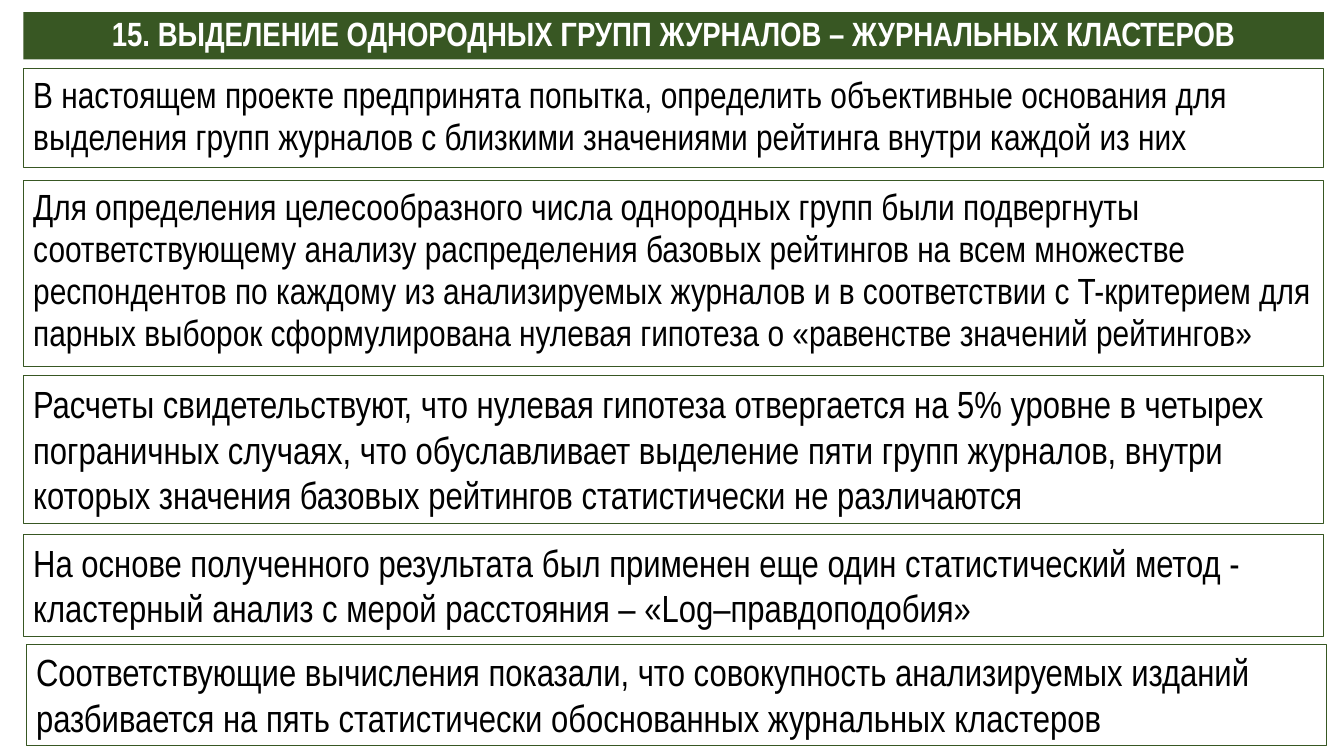
from dataclasses import dataclass

from pptx import Presentation
from pptx import util as u
from pptx.dml import color
from pptx.enum import shapes, text

COLOURS = {"green": "385723", "white": "FFFFFF", "black": "000000"}
FONT = "Arial Narrow"
SLIDE_WIDTH, SLIDE_HEIGHT = u.Inches(13.33), u.Inches(7.5)
LEFT_SHARE, WIDTH_SHARE = 0.0173, 0.9677


@dataclass(frozen=True)
class Statement:
    wording: str
    top: float
    height: float
    size: int = 27
    line_spacing: int | None = None
    left: float = LEFT_SHARE
    heading: bool = False


STATEMENTS = [
    Statement(
        "15. ВЫДЕЛЕНИЕ ОДНОРОДНЫХ ГРУПП ЖУРНАЛОВ – ЖУРНАЛЬНЫХ КЛАСТЕРОВ",
        0.016, 0.0627, size=24, line_spacing=26, heading=True,
    ),
    Statement(
        "В настоящем проекте предпринята попытка, определить объективные основания "
        "для выделения групп журналов с близкими значениями рейтинга внутри каждой из них",
        0.0907, 0.1307, size=26, line_spacing=30,
    ),
    Statement(
        "Для определения целесообразного числа однородных групп были подвергнуты "
        "соответствующему анализу распределения базовых рейтингов на всем множестве "
        "респондентов по каждому из анализируемых журналов и в соответствии с "
        "T-критерием для парных выборок сформулирована нулевая гипотеза о "
        "«равенстве значений рейтингов»",
        0.2387, 0.2467, size=26, line_spacing=30,
    ),
    Statement(
        "Расчеты свидетельствуют, что нулевая гипотеза отвергается на 5% уровне "
        "в четырех пограничных случаях, что обуславливает выделение пяти групп "
        "журналов, внутри которых значения базовых рейтингов статистически не различаются",
        0.4973, 0.1947,
    ),
    Statement(
        "На основе полученного результата был применен еще один статистический "
        "метод - кластерный анализ с мерой расстояния – «Log–правдоподобия»",
        0.7067, 0.1347,
    ),
    Statement(
        "Соответствующие вычисления показали, что совокупность анализируемых изданий "
        "разбивается на пять статистически обоснованных журнальных кластеров",
        0.852, 0.1347, left=0.0195,
    ),
]


def rgb(name: str) -> color.RGBColor:
    return color.RGBColor.from_string(COLOURS[name])


def draw_statement(slide, statement: Statement) -> None:
    box = slide.shapes.add_shape(
        shapes.MSO_SHAPE.RECTANGLE,
        round(SLIDE_WIDTH * statement.left),
        round(SLIDE_HEIGHT * statement.top),
        round(SLIDE_WIDTH * WIDTH_SHARE),
        round(SLIDE_HEIGHT * statement.height),
    )
    box.shadow.inherit = False
    frame = box.text_frame
    frame.word_wrap = True
    frame.auto_size = text.MSO_AUTO_SIZE.SHAPE_TO_FIT_TEXT
    frame.vertical_anchor = text.MSO_ANCHOR.TOP
    paragraph = frame.paragraphs[0]
    if statement.line_spacing:
        paragraph.line_spacing = u.Pt(statement.line_spacing)
    if statement.heading:
        box.fill.solid()
        box.fill.fore_color.rgb = rgb("green")
        box.line.fill.background()
        paragraph.alignment = text.PP_ALIGN.CENTER
        paragraph.space_before = paragraph.space_after = u.Pt(6)
    else:
        box.fill.background()
        box.line.color.rgb = rgb("green")
        box.line.width = u.Pt(0.75)
        paragraph.alignment = text.PP_ALIGN.LEFT
    run = paragraph.add_run()
    run.text = statement.wording
    run.font.name = FONT
    run.font.size = u.Pt(statement.size)
    run.font.bold = statement.heading
    run.font.color.rgb = rgb("white" if statement.heading else "black")


def main() -> None:
    deck = Presentation()
    deck.slide_width, deck.slide_height = SLIDE_WIDTH, SLIDE_HEIGHT
    slide = deck.slides.add_slide(deck.slide_layouts[6])
    for statement in STATEMENTS:
        draw_statement(slide, statement)
    deck.save("out.pptx")


if __name__ == "__main__":
    main()
